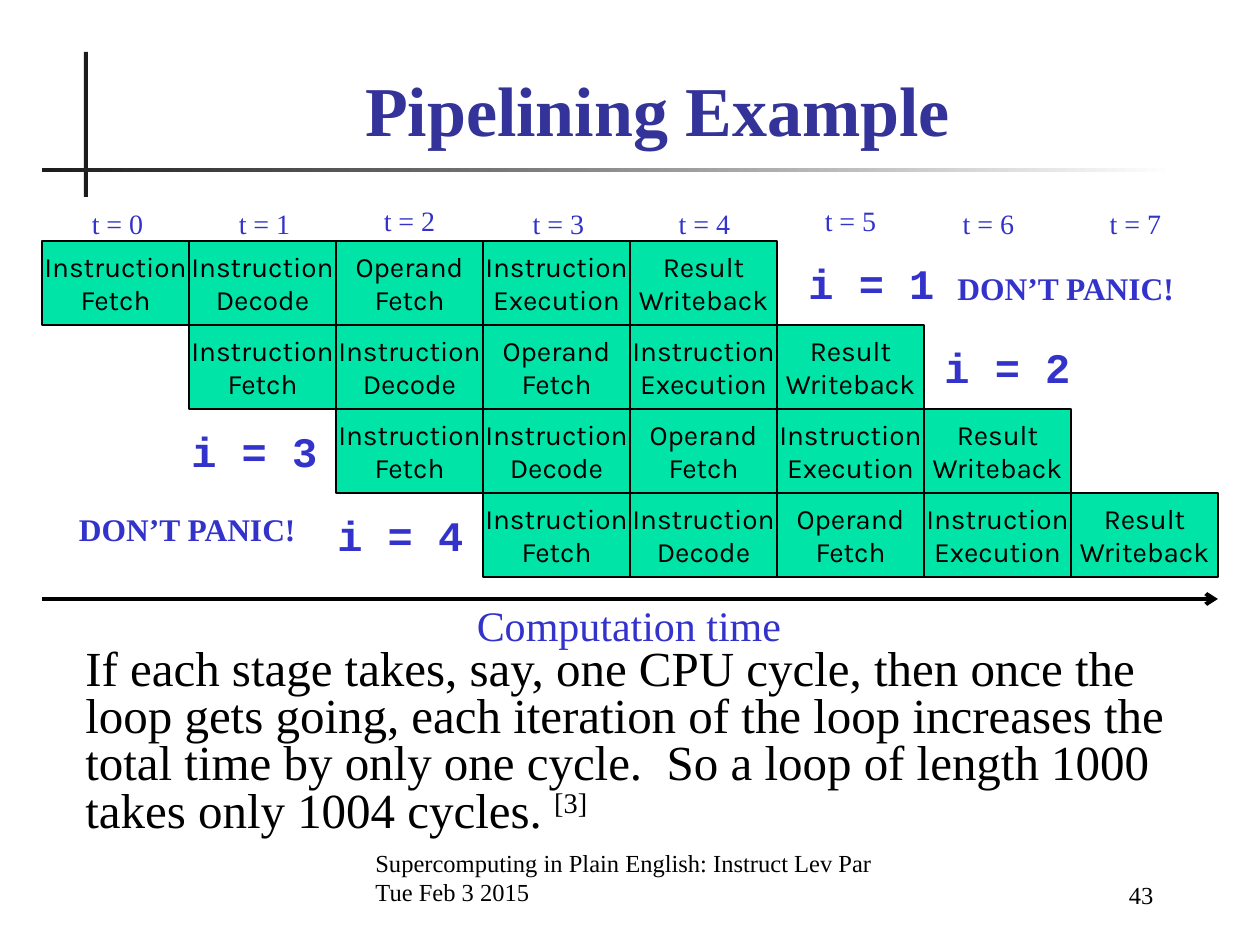
import pptx
import pptx.dml.color
import pptx.enum.shapes
import pptx.enum.text
import pptx.oxml
import pptx.oxml.ns
import pptx.util

PX = 914400 // 126
SERIF = "Times New Roman"
BLUE = "3333CC"
BLACK = "000000"
ALIGN = pptx.enum.text.PP_ALIGN
ANCHOR = pptx.enum.text.MSO_ANCHOR
RECTANGLE = pptx.enum.shapes.MSO_SHAPE.RECTANGLE


def rgb(value):
    return pptx.dml.color.RGBColor.from_string(value)


def write(shape, text, size, color=BLACK, font=SERIF, bold=False,
          align=ALIGN.LEFT, anchor=ANCHOR.TOP, wrap=False):
    """Fill a shape with text, one paragraph per line, and return its frame."""
    frame = shape.text_frame
    frame.text = text
    frame.word_wrap = wrap
    frame.vertical_anchor = anchor
    for paragraph in frame.paragraphs:
        paragraph.alignment = align
        paragraph.font.size = pptx.util.Pt(size)
        paragraph.font.name = font
        paragraph.font.bold = bold
        paragraph.font.color.rgb = rgb(color)
    return frame


presentation = pptx.Presentation()
presentation.slide_width = pptx.util.Inches(10)
presentation.slide_height = pptx.util.Inches(7.5)
slide = presentation.slides.add_slide(presentation.slide_layouts[6])
shapes = slide.shapes

# Crossed rules beside and under the title
upright = shapes.add_shape(RECTANGLE, 84 * PX, 52 * PX, 4 * PX, 145 * PX)
upright.fill.solid()
upright.fill.fore_color.rgb = rgb("1C1C1C")
underline = shapes.add_shape(RECTANGLE, 42 * PX, 168 * PX, 1134 * PX, 4 * PX)
underline.fill.gradient()
underline.fill.gradient_angle = 0
for stop, position, color in zip(underline.fill.gradient_stops, (0, 1), ("1C1C1C", "FFFFFF")):
    stop.position = position
    stop.color.rgb = rgb(color)
for rule in (upright, underline):
    rule.line.fill.background()
    rule.shadow.inherit = False

footer = shapes.add_textbox(363 * PX, 850 * PX, 551 * PX, 63 * PX)
write(footer, "Supercomputing in Plain English: Instruct Lev Par\nTue Feb 3 2015", 14,
      anchor=ANCHOR.BOTTOM, wrap=True)
page_number = shapes.add_textbox(987 * PX, 853 * PX, 179 * PX, 63 * PX)
write(page_number, "43", 14, align=ALIGN.RIGHT, anchor=ANCHOR.BOTTOM, wrap=True)
title = shapes.add_textbox(105 * PX, 64 * PX, 1105 * PX, 93 * PX)
write(title, "Pipelining Example", 40, "333399", bold=True,
      align=ALIGN.CENTER, anchor=ANCHOR.BOTTOM, wrap=True)

# Each iteration starts one cycle after the one above it
STAGES = ["Instruction\nFetch", "Instruction\nDecode", "Operand\nFetch",
          "Instruction\nExecution", "Result\nWriteback"]
STAGE_WIDTH, STAGE_HEIGHT = 147, 84
for iteration in range(4):
    for step, stage_name in enumerate(STAGES):
        stage = shapes.add_shape(
            RECTANGLE, (42 + (iteration + step) * STAGE_WIDTH) * PX,
            (241 + iteration * STAGE_HEIGHT) * PX, STAGE_WIDTH * PX, STAGE_HEIGHT * PX)
        stage.shadow.inherit = False
        stage.fill.solid()
        stage.fill.fore_color.rgb = rgb("00E4A8")
        stage.line.color.rgb = rgb(BLACK)
        stage.line.width = pptx.util.Pt(0.75)
        write(stage, stage_name, 16, font="Karla", align=ALIGN.CENTER, anchor=ANCHOR.MIDDLE)

for row, left in enumerate((796, 932, 179, 325)):
    iteration_label = shapes.add_textbox(
        left * PX, (251 + row * STAGE_HEIGHT) * PX, 151 * PX, 63 * PX)
    write(iteration_label, f"i = {row + 1}", 24, BLUE, font="Courier New", bold=True)

time_axis = shapes.add_connector(
    pptx.enum.shapes.MSO_CONNECTOR.STRAIGHT, 42 * PX, 599 * PX, 1218 * PX, 599 * PX)
time_axis.line.color.rgb = rgb(BLACK)
time_axis.line.width = pptx.util.Pt(2.25)
arrowhead = pptx.oxml.parse_xml(
    f'<a:tailEnd {pptx.oxml.ns.nsdecls("a")} type="arrow"/>')
time_axis.line._get_or_add_ln().append(arrowhead)
time_axis._element.spPr.append(
    pptx.oxml.parse_xml(f'<a:effectLst {pptx.oxml.ns.nsdecls("a")}/>'))
axis_label = shapes.add_textbox(449 * PX, 593 * PX, 360 * PX, 63 * PX)
write(axis_label, "Computation time", 24, BLUE, align=ALIGN.CENTER)

explanation = shapes.add_textbox(73 * PX, 643 * PX, 1113 * PX, 200 * PX)
paragraph = write(
    explanation,
    "If each stage takes, say, one CPU cycle, then once the loop gets going, each iteration "
    "of the loop increases the total time by only one cycle.  So a loop of length 1000 "
    "takes only 1004 cycles. ", 28, wrap=True).paragraphs[0]
paragraph.line_spacing = 0.8
citation = paragraph.add_run()
citation.text = "[3]"
citation.font._element.set("baseline", "30000")

for cycle, left in enumerate((79, 226, 371, 520, 666, 812, 950, 1097)):
    top = 197 if cycle in (2, 5) else 200
    cycle_label = shapes.add_textbox(left * PX, top * PX, 77 * PX, 47 * PX)
    write(cycle_label, f"t = {cycle}", 16, BLUE, align=ALIGN.CENTER)

for left, top, align in ((64, 504, ALIGN.RIGHT), (945, 263, ALIGN.LEFT)):
    reassurance = shapes.add_textbox(left * PX, top * PX, 244 * PX, 50 * PX)
    write(reassurance, "DON’T PANIC!", 18, BLUE, bold=True, align=align)

presentation.save("out.pptx")
